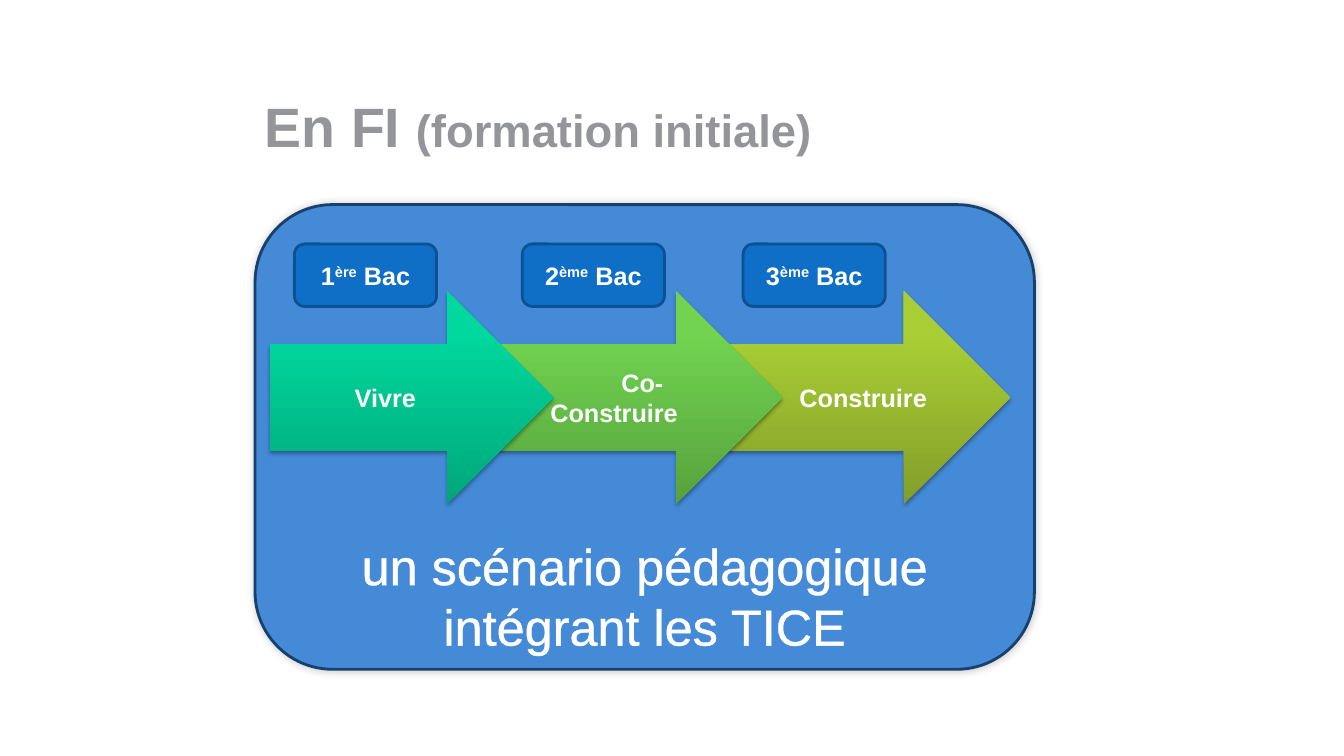
from lxml import etree
from pptx import Presentation
from pptx import util as u
from pptx.dml.color import RGBColor
from pptx.enum import shapes, text
from pptx.oxml.ns import qn


def rgb(value):
    return RGBColor.from_string(value)


class SlideBuilder:
    FONT = "Arial"
    WHITE = "FFFFFF"

    def __init__(self, slide):
        self.slide = slide

    def set_font(self, paragraph, size, color=WHITE, bold=False):
        font = paragraph.font
        font.name, font.size, font.bold = self.FONT, u.Pt(size), bold
        font.color.rgb = rgb(color)

    def shape(self, kind, left, top, width, height):
        box = self.slide.shapes.add_shape(kind, *map(u.Inches, (left, top, width, height)))
        box.shadow.inherit = False
        box.text_frame.word_wrap = True
        box.text_frame.vertical_anchor = text.MSO_ANCHOR.MIDDLE
        box.text_frame.paragraphs[0].alignment = text.PP_ALIGN.CENTER
        return box

    def rounded(self, left, top, width, height, fill, line):
        box = self.shape(shapes.MSO_SHAPE.ROUNDED_RECTANGLE, left, top, width, height)
        box.fill.solid()
        box.fill.fore_color.rgb = rgb(fill)
        box.line.color.rgb = rgb(line)
        box.line.width = u.Pt(2)
        return box

    def cast_shadow(self, box, alpha, blur, distance, angle):
        effects = box._element.spPr.find(qn("a:effectLst"))
        shadow = etree.SubElement(
            effects, qn("a:outerShdw"), blurRad=str(u.Pt(blur)), dist=str(u.Pt(distance)),
            dir=str(angle * 60000), algn="ctr", rotWithShape="0")
        color = etree.SubElement(shadow, qn("a:srgbClr"), val="000000")
        etree.SubElement(color, qn("a:alpha"), val=str(alpha * 1000))

    def panel(self, caption):
        box = self.rounded(2.53, 2.03, 7.73, 4.61, "448AD7", "17406D")
        self.cast_shadow(box, 20, 6, 0, 315)
        frame = box.text_frame
        frame.vertical_anchor = text.MSO_ANCHOR.TOP
        frame.margin_top, frame.margin_bottom = u.Inches(3.05), 0
        run = frame.paragraphs[0].add_run()
        run.text = caption
        self.set_font(frame.paragraphs[0], 36)
        outline = etree.Element(qn("a:ln"), w=str(u.Pt(1.45)))
        fill = etree.SubElement(outline, qn("a:solidFill"))
        etree.SubElement(fill, qn("a:srgbClr"), val=self.WHITE)
        run.font._element.insert(0, outline)

    def stage_arrow(self, left, label, indent, dark, light):
        """Draw a gradient arrow whose first text line is indented."""
        arrow = self.shape(shapes.MSO_SHAPE.RIGHT_ARROW, left, 2.89, 2.81, 2.11)
        arrow.line.fill.background()
        arrow.fill.gradient()
        arrow.fill.gradient_angle = 90
        for stop, color, position in zip(arrow.fill.gradient_stops, (dark, light), (0, 0.8)):
            stop.color.rgb = rgb(color)
            stop.position = position
        self.cast_shadow(arrow, 35, 3.1, 1.8, 90)
        paragraph = arrow.text_frame.paragraphs[0]
        paragraph.text = label
        paragraph._p.get_or_add_pPr().set("indent", str(u.Inches(indent)))
        self.set_font(paragraph, 18, bold=True)

    def year_badge(self, left, number, suffix):
        badge = self.rounded(left, 2.42, 1.41, 0.62, "0F6FC6", "0B5292")
        paragraph = badge.text_frame.paragraphs[0]
        for part in (number, suffix, " Bac"):
            run = paragraph.add_run()
            run.text = part
            if part == suffix:
                run.font._element.set("baseline", "30000")
        self.set_font(paragraph, 18, bold=True)

    def title(self, main, detail):
        box = self.slide.shapes.add_textbox(*map(u.Inches, (2.53, 0.93, 9, 0.62)))
        frame = box.text_frame
        frame.word_wrap = True
        frame.vertical_anchor = text.MSO_ANCHOR.MIDDLE
        paragraph = frame.paragraphs[0]
        for part, size in ((main, 39.6), (detail, 32.4)):
            run = paragraph.add_run()
            run.text = part
            run.font.size = u.Pt(size)
        self.set_font(paragraph, 39.6, "949599", bold=True)


STAGES = [
    (2.68, "Vivre", 0, "00A679", "00D89D"),
    (4.95, "Co-Construire", 0.56, "57A23D", "71D350"),
    (7.21, "Construire", 0.42, "829E29", "A9CE35"),
]
YEARS = [(2.92, "1", "ère"), (5.18, "2", "ème"), (7.37, "3", "ème")]


def main():
    deck = Presentation()
    deck.slide_width, deck.slide_height = u.Inches(13.33), u.Inches(7.5)
    builder = SlideBuilder(deck.slides.add_slide(deck.slide_layouts[6]))
    builder.panel("un scénario pédagogique intégrant les TICE")
    for stage in reversed(STAGES):
        builder.stage_arrow(*stage)
    for year in YEARS:
        builder.year_badge(*year)
    builder.title("En FI ", "(formation initiale)")
    deck.save("out.pptx")


if __name__ == "__main__":
    main()
